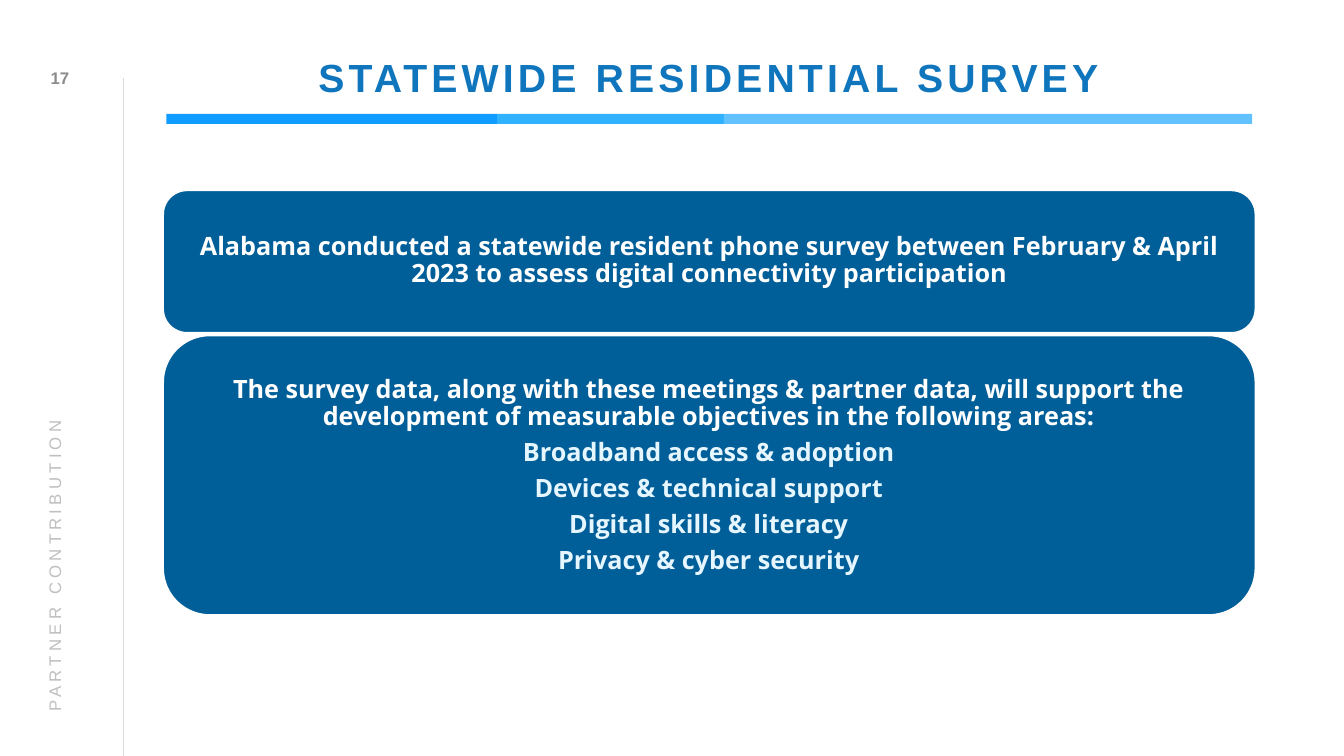
from pptx import Presentation, util as u
from pptx.dml.color import RGBColor
from pptx.enum import shapes, text
from pptx.oxml import xmlchemy

COLORS = {
    "rule": "D9D9D9",
    "number": "8C8C8C",
    "section": "BFBFBF",
    "title": "0F75BC",
    "panel": "005E98",
    "white": "FFFFFF",
    "area": "E6F6FF",
    "bar_dark": "119DFF",
    "bar_mid": "31B2FF",
    "bar_light": "62C1FF",
}
BAR_SEGMENTS = [("bar_dark", 3.28), ("bar_mid", 2.25), ("bar_light", 5.24)]
SURVEY = (
    "Alabama conducted a statewide resident phone survey between "
    "February & April 2023 to assess digital connectivity participation"
)
OBJECTIVES = (
    "The survey data, along with these meetings & partner data, will support "
    "the development of measurable objectives in the following areas:"
)
AREAS = [
    "Broadband access & adoption",
    "Devices & technical support",
    "Digital skills & literacy",
    "Privacy & cyber security",
]


def color(key):
    return RGBColor.from_string(COLORS[key])


def inches(values):
    return [u.Inches(value) for value in values]


def add_text(slide, box, lines, size, font="Arial", bold=True, spacing=0,
             centered=True, line_spacing=None, after=0,
             margins=(0.1, 0.05, 0.1, 0.05), anchor="MIDDLE", rotation=0):
    holder = slide.shapes.add_textbox(*inches(box))
    holder.rotation = rotation
    frame = holder.text_frame
    frame.word_wrap = True
    frame.vertical_anchor = text.MSO_ANCHOR[anchor]
    (frame.margin_left, frame.margin_top,
     frame.margin_right, frame.margin_bottom) = inches(margins)
    for index, (wording, tone) in enumerate(lines):
        paragraph = frame.add_paragraph() if index else frame.paragraphs[0]
        paragraph.alignment = text.PP_ALIGN.CENTER if centered else text.PP_ALIGN.LEFT
        paragraph.line_spacing = line_spacing
        paragraph.space_after = u.Pt(after)
        run = paragraph.add_run()
        run.text = wording
        run.font.name = font
        run.font.size = u.Pt(size)
        run.font.bold = bold
        run.font.color.rgb = color(tone)
        if spacing:
            run._r.get_or_add_rPr().set("spc", str(spacing * 100))


def add_block(slide, preset, box, fill, outline=None):
    block = slide.shapes.add_shape(preset, *inches(box))
    block.shadow.inherit = False
    block.fill.solid()
    block.fill.fore_color.rgb = color(fill)
    if outline:
        block.line.color.rgb = color(outline)
        block.line.width = u.Pt(1)
    else:
        block.line.fill.background()


def add_side_rule(slide):
    rule = slide.shapes.add_connector(
        shapes.MSO_CONNECTOR.STRAIGHT, *inches((1.22, 7.5, 1.22, 0.77)))
    rule.line.color.rgb = color("rule")
    rule.line.width = u.Pt(0.5)
    rule._element.spPr.append(xmlchemy.OxmlElement("a:effectLst"))


def add_title_bar(slide):
    left = 1.65
    for tone, width in BAR_SEGMENTS:
        add_block(slide, shapes.MSO_SHAPE.RECTANGLE, (left, 1.13, width, 0.1), tone)
        left += width


def add_panel(slide, top, height, text_box, lines):
    add_block(slide, shapes.MSO_SHAPE.ROUNDED_RECTANGLE,
              (1.62, top, 10.83, height), "panel", outline="white")
    add_text(slide, text_box, lines, size=18, font="Open Sans",
             line_spacing=0.9, after=6.3, margins=(0.07,) * 4)


def main():
    deck = Presentation()
    deck.slide_width, deck.slide_height = inches((13.33, 7.5))
    slide = deck.slides.add_slide(deck.slide_layouts[6])

    add_side_rule(slide)
    add_title_bar(slide)
    add_text(slide, (0.27, 0.57, 0.65, 0.4), [("17", "number")], size=12, after=6)
    add_panel(slide, 1.89, 1.41, (1.69, 1.95, 10.69, 1.27), [(SURVEY, "white")])
    add_panel(slide, 3.33, 2.77, (1.75, 3.47, 10.56, 2.5),
              [(OBJECTIVES, "white")] + [(area, "area") for area in AREAS])
    add_text(slide, (1.65, 0.4, 10.76, 0.74),
             [("STATEWIDE RESIDENTIAL SURVEY", "title")], size=28, spacing=3,
             line_spacing=0.9, margins=(0, 0.05, 0, 0))
    add_text(slide, (-2.42, 3.95, 6.02, 0.4),
             [("PARTNER CONTRIBUTION", "section")], size=12, bold=False, spacing=3,
             centered=False, anchor="TOP", rotation=270)

    deck.save("out.pptx")


if __name__ == "__main__":
    main()
